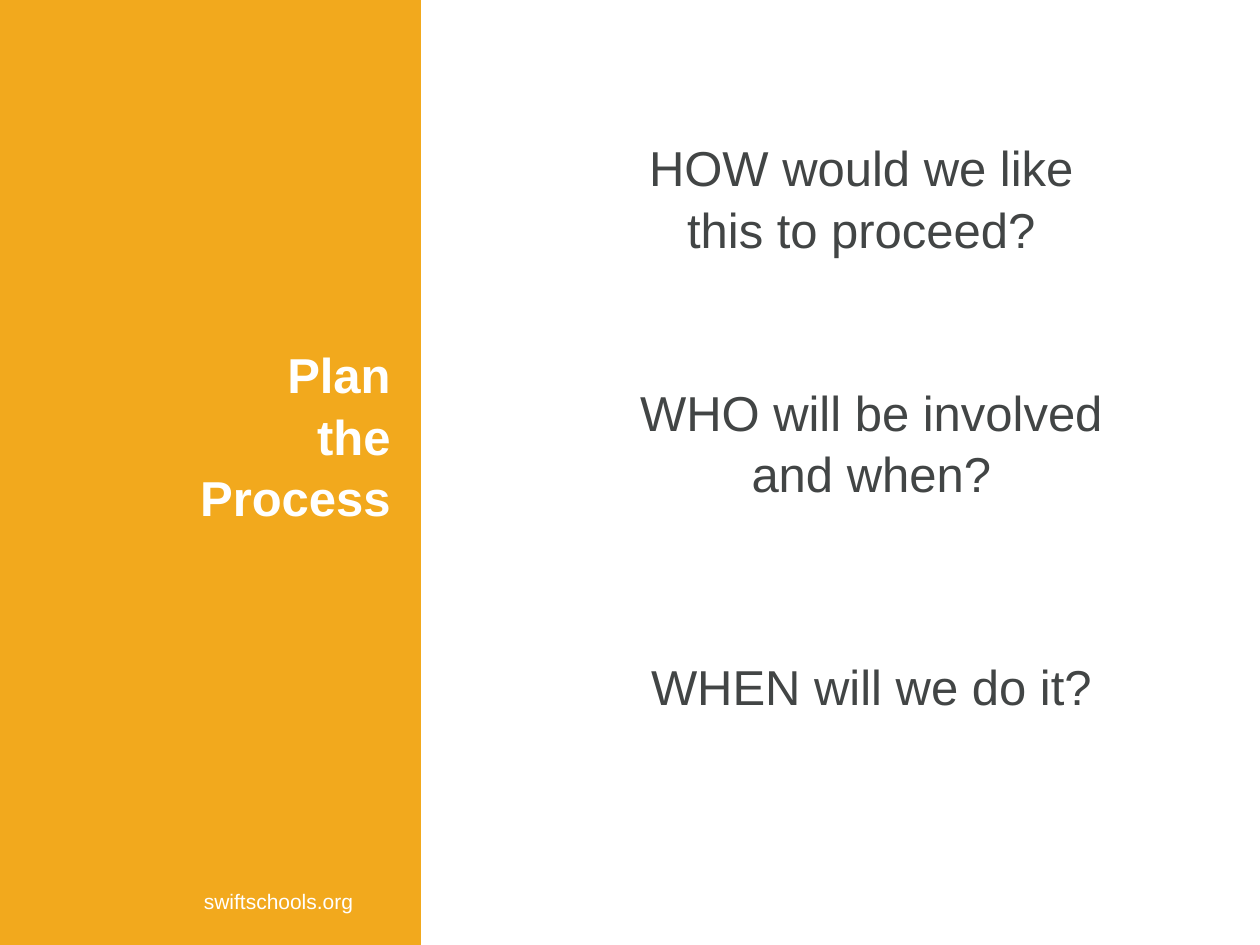
"""Build the "Plan the Process" slide with its three planning questions."""
from dataclasses import dataclass

from pptx import Presentation
from pptx.dml.color import RGBColor
from pptx.enum import shapes, text
from pptx.slide import Slide
from pptx.text.text import TextFrame
from pptx.util import Inches, Pt

COLORS = {"panel": "F2A91D", "light": "FFFFFF", "ink": "424545"}
LINE_SPACING = 1.05


@dataclass
class Question:
    wording: str
    left: float
    top: float


QUESTIONS = [
    Question("HOW would we like this to proceed?", 4.78, 0.96),
    Question("WHO will be involved and when?", 4.86, 2.9),
    Question("WHEN will we do it?", 4.86, 4.83),
]


def rgb(name: str) -> RGBColor:
    return RGBColor.from_string(COLORS[name])


def write(frame: TextFrame, wording: str, size: int, color: str,
          align: text.PP_ALIGN, anchor: text.MSO_ANCHOR, bold: bool = False) -> None:
    frame.text = wording
    frame.word_wrap = True
    frame.vertical_anchor = anchor
    for para in frame.paragraphs:
        para.alignment = align
        para.line_spacing = LINE_SPACING
        para.space_before = Pt(0)
        para.font.name = "Arial"
        para.font.size = Pt(size)
        para.font.bold = bold
        para.font.color.rgb = rgb(color)


def add_title(slide: Slide) -> None:
    title = slide.shapes.title
    title.left, title.top = Inches(0.2), Inches(2.66)
    title.width, title.height = Inches(3), Inches(1.85)
    write(title.text_frame, "Plan\nthe\nProcess", 28, "light",
          text.PP_ALIGN.RIGHT, text.MSO_ANCHOR.TOP, bold=True)


def add_panel(slide: Slide) -> None:
    panel = slide.shapes.add_shape(shapes.MSO_SHAPE.RECTANGLE, 0, 0, Inches(3.33), Inches(7.5))
    panel.shadow.inherit = False
    panel.fill.solid()
    panel.fill.fore_color.rgb = rgb("panel")
    panel.line.color.rgb = rgb("panel")
    panel.line.width = Pt(2)
    slide.shapes.title.element.addprevious(panel.element)


def add_site(slide: Slide) -> None:
    box = slide.shapes.add_textbox(Inches(1.52), Inches(6.99), Inches(1.74), Inches(0.3))
    write(box.text_frame, "swiftschools.org", 12, "light",
          text.PP_ALIGN.LEFT, text.MSO_ANCHOR.TOP)


def add_question(slide: Slide, question: Question) -> None:
    box = slide.shapes.add_shape(
        shapes.MSO_SHAPE.ROUNDED_RECTANGLE,
        Inches(question.left), Inches(question.top), Inches(4.11), Inches(1.2))
    box.shadow.inherit = False
    box.fill.background()
    box.line.fill.background()
    write(box.text_frame, question.wording, 28, "ink",
          text.PP_ALIGN.CENTER, text.MSO_ANCHOR.MIDDLE)


def main() -> None:
    deck = Presentation()
    deck.slide_width, deck.slide_height = Inches(10), Inches(7.5)
    slide = deck.slides.add_slide(deck.slide_layouts[5])
    add_panel(slide)
    add_site(slide)
    add_title(slide)
    for question in QUESTIONS:
        add_question(slide, question)
    deck.save("out.pptx")


if __name__ == "__main__":
    main()
